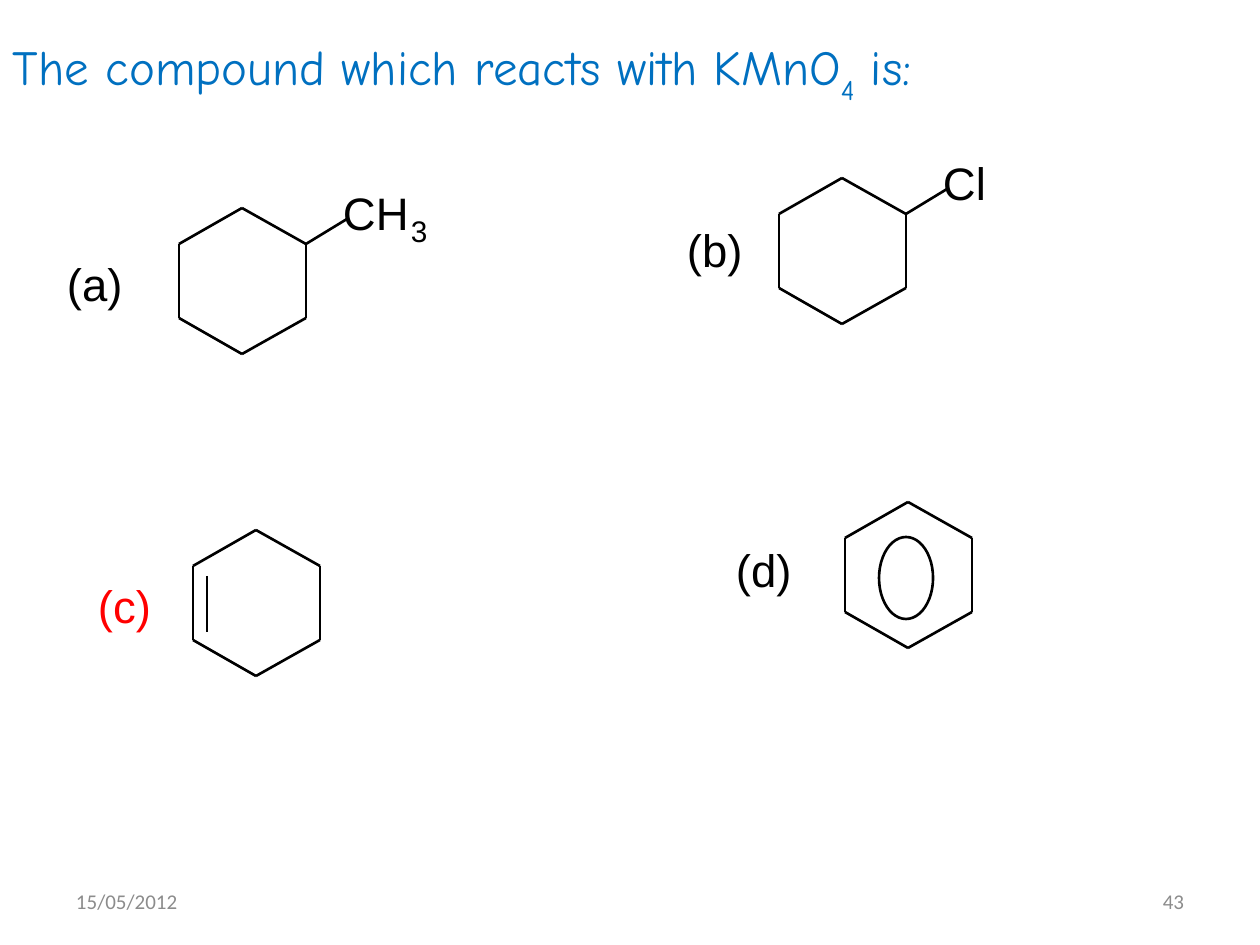
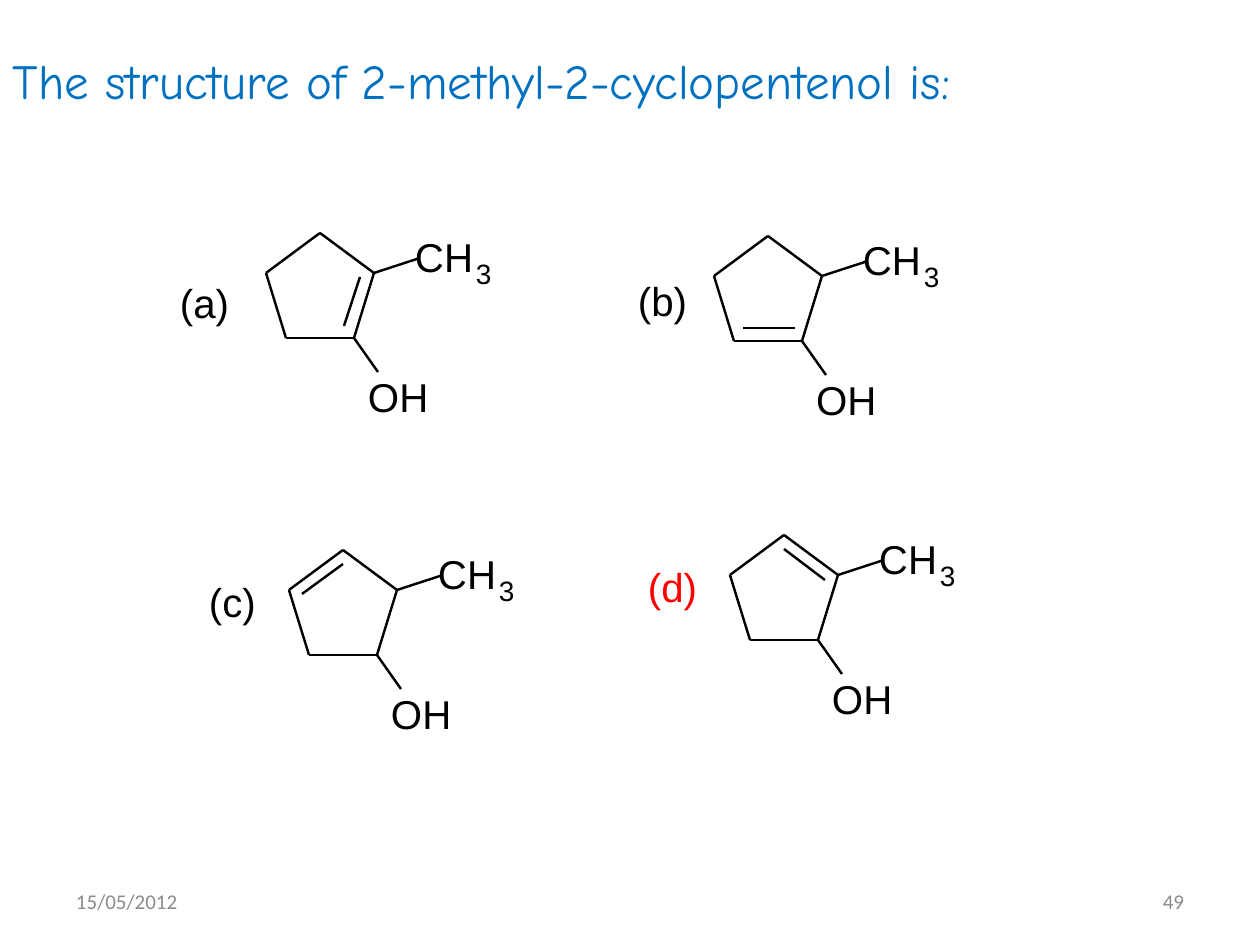
import pptx
import pptx.dml.color
import pptx.enum.shapes
import pptx.enum.text
import pptx.oxml.ns
import pptx.util
import lxml.etree

PX = 914400 / 126  # EMU in one px
COLOURS = {"title": "0070C0", "ink": "000000", "answer": "FF0000", "footer": "8C8C8C"}
FONTS = {"title": "Comic Neue", "chemistry": "Arial", "footer": "Calibri"}

# Ring corners, clockwise from the top, relative to the ring's box
HEXAGON = [(63, 0), (127, 36), (127, 110), (63, 146), (0, 110), (0, 36)]
PENTAGON = [(54, 0), (108, 40), (88, 105), (20, 105), (0, 40)]

# Label, label place, ring place, and what the ring carries
HEXAGON_OPTIONS = [
    ("(a)", (67, 256), (179, 208), {"group": "CH", "count": "3"}),
    ("(b)", (687, 222), (779, 178), {"group": "Cl"}),
    ("(c)", (98, 578), (193, 530), {"double": ((14, 46), (14, 102))}),
    ("(d)", (736, 542), (845, 502), {"aromatic": True}),
]
PENTAGON_OPTIONS = [
    ("(a)", (180, 278), (266, 233), ((78, 93), (94, 44))),
    ("(b)", (638, 276), (714, 236), ((29, 92), (81, 92))),
    ("(c)", (209, 577), (289, 550), ((54, 14), (13, 44))),
    ("(d)", (648, 562), (730, 535), ((95, 45), (54, 14))),
]


def emu(*lengths):
    return [pptx.util.Emu(round(length * PX)) for length in lengths]


def rgb(name):
    return pptx.dml.color.RGBColor.from_string(COLOURS[name])


def add_text(shapes, text, box, font="chemistry", size=26, colour="ink",
             align="LEFT", anchor="TOP", inset=(0, 0)):
    """Add a text box; text is a string or a list of (string, baseline)."""
    text_box = shapes.add_textbox(*emu(*box))
    frame = text_box.text_frame
    frame.word_wrap = True
    frame.vertical_anchor = getattr(pptx.enum.text.MSO_ANCHOR, anchor)
    frame.margin_left, frame.margin_top = frame.margin_right, frame.margin_bottom = emu(*inset)
    para = frame.paragraphs[0]
    para.alignment = getattr(pptx.enum.text.PP_ALIGN, align)
    for words, baseline in [(text, 0)] if isinstance(text, str) else text:
        span = para.add_run()
        span.text = words
        span.font.name = FONTS[font]
        span.font.size = pptx.util.Pt(size)
        span.font.color.rgb = rgb(colour)
        if baseline:
            span.font._element.set("baseline", str(baseline * 1000))


def add_bond(shapes, origin, start, end, width):
    left, top = origin
    bond = shapes.add_connector(
        pptx.enum.shapes.MSO_CONNECTOR.STRAIGHT,
        *emu(left + start[0], top + start[1], left + end[0], top + end[1]))
    bond.line.color.rgb = rgb("ink")
    bond.line.width = pptx.util.Pt(width)
    lxml.etree.SubElement(bond._element.spPr, pptx.oxml.ns.qn("a:effectLst"))


def add_ring(shapes, origin, corners, width):
    for start, end in zip(corners, corners[1:] + corners[:1]):
        add_bond(shapes, origin, start, end, width)


def add_label(page, label, place, size, answer):
    add_text(page.shapes, label, (*place, 76, 60), size=size,
             colour="answer" if label == answer else "ink")


def add_hexagon(page, origin, group=None, count=None, double=None, aromatic=False):
    shapes = page.shapes.add_group_shape().shapes
    left, top = origin
    add_ring(shapes, origin, HEXAGON, 1.5)
    if double:
        add_bond(shapes, origin, *double, 1.5)
    if group:
        add_bond(shapes, origin, HEXAGON[1], (168, 11), 1.5)
        add_text(shapes, group, (left + 164, top - 23, 76, 60))
    if count:
        add_text(shapes, count, (left + 232, top + 5, 29, 40), size=17)
    if aromatic:
        circle = shapes.add_shape(pptx.enum.shapes.MSO_SHAPE.OVAL,
                                  *emu(left + 34, top + 35, 54, 82))
        circle.shadow.inherit = False
        circle.fill.background()
        circle.line.color.rgb = rgb("ink")
        circle.line.width = pptx.util.Pt(1.5)


def add_pentagon(page, origin, double):
    shapes = page.shapes.add_group_shape().shapes
    left, top = origin
    add_ring(shapes, origin, PENTAGON, 1.38)
    add_bond(shapes, origin, *double, 1.38)
    # Methyl and hydroxyl groups
    add_bond(shapes, origin, PENTAGON[1], (154, 25), 1.38)
    add_text(shapes, "CH", (left + 149, top - 1, 76, 55), size=23)
    add_text(shapes, "3", (left + 210, top + 24, 28, 38), size=16)
    add_bond(shapes, origin, PENTAGON[2], (112, 139), 1.38)
    add_text(shapes, "OH", (left + 102, top + 139, 80, 55), size=23)


def add_question(deck, title, title_box, number):
    """Add a page with its title, date and page number."""
    page = deck.slides.add_slide(deck.slide_layouts[6])
    add_text(page.shapes, title, title_box, font="title", size=28,
             colour="title", anchor="MIDDLE", inset=(13, 6))
    for text, left, align in [("15/05/2012", 63, "LEFT"), (number, 903, "RIGHT")]:
        add_text(page.shapes, text, (left, 876, 294, 50), font="footer", size=12,
                 colour="footer", align=align, anchor="MIDDLE", inset=(13, 6))
    return page


def add_permanganate_page(deck):
    title = [("The compound which reacts with KMnO", 0), ("4", -30), (" is:", 0)]
    page = add_question(deck, title, (0, 35, 1018, 73), "43")
    for label, place, origin, parts in HEXAGON_OPTIONS:
        add_hexagon(page, origin, **parts)
        add_label(page, label, place, 26, answer="(c)")


def add_cyclopentenol_page(deck):
    title = "The structure of 2-methyl-2-cyclopentenol is:"
    page = add_question(deck, title, (0, 43, 1091, 73), "49")
    for label, place, origin, double in PENTAGON_OPTIONS:
        add_pentagon(page, origin, double)
        add_label(page, label, place, 23, answer="(d)")


def main():
    deck = pptx.Presentation()
    deck.slide_width, deck.slide_height = emu(1260, 945)
    add_permanganate_page(deck)
    add_cyclopentenol_page(deck)
    deck.save("out.pptx")


if __name__ == "__main__":
    main()
